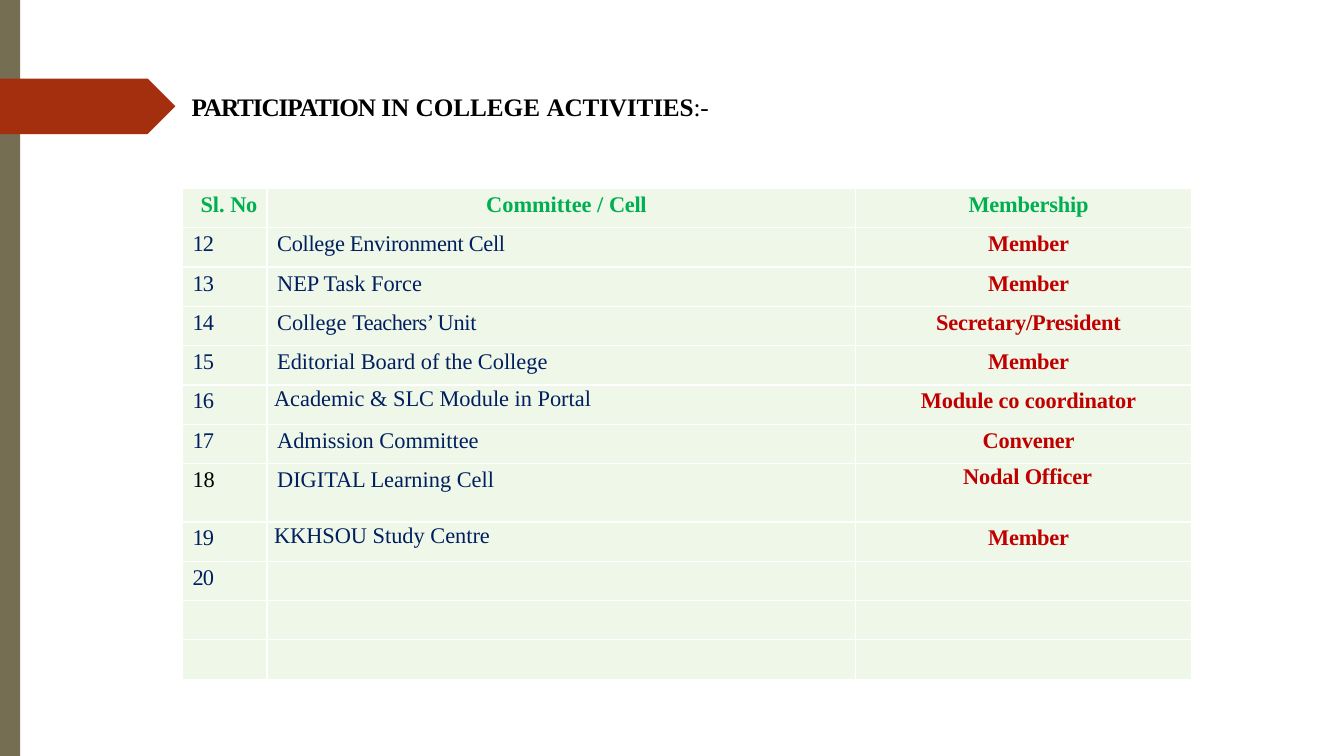
from dataclasses import dataclass

from lxml import etree
from pptx import Presentation
from pptx.dml.color import RGBColor
from pptx.enum.shapes import MSO_SHAPE
from pptx.enum.text import MSO_ANCHOR, MSO_AUTO_SIZE, PP_ALIGN
from pptx.oxml.ns import qn
from pptx.util import Inches, Pt

LEFT, CENTER = PP_ALIGN.LEFT, PP_ALIGN.CENTER
TOP = MSO_ANCHOR.TOP


@dataclass(frozen=True)
class Theme:
    font: str = "Times New Roman"
    title_size: int = 18
    table_size: int = 16
    black: str = "000000"
    header: str = "00AF50"
    entry: str = "001F5F"
    role: str = "C00000"
    cell: str = "EFF7E8"
    border: str = "FFFFFF"
    strip: str = "766E53"
    arrow: str = "A42F0F"


theme = Theme()


def write_spans(para, spans, size, color, bold):
    """Add (text, letter spacing in points) spans in one style to a paragraph."""
    for text, spacing in spans:
        span = para.add_run()
        span.text = text
        span.font.name = theme.font
        span.font.size = Pt(size)
        span.font.bold = bold
        span.font.color.rgb = RGBColor.from_string(color)
        span.font._element.set("spc", str(round(spacing * 100)))


def add_white_borders(cell):
    properties = cell._tc.get_or_add_tcPr()
    for position, side in enumerate(("a:lnL", "a:lnR", "a:lnT", "a:lnB")):
        line = etree.Element(qn(side), w=str(Pt(1)))
        fill = etree.SubElement(line, qn("a:solidFill"))
        etree.SubElement(fill, qn("a:srgbClr"), val=theme.border)
        properties.insert(position, line)


deck = Presentation()
deck.slide_width, deck.slide_height = Inches(13.333), Inches(7.5)
page = deck.slides.add_slide(deck.slide_layouts[5])

# Side strip and arrow
for preset, top, width, height, color in (
    (MSO_SHAPE.RECTANGLE, 0, 0.2, 7.5, theme.strip),
    (MSO_SHAPE.PENTAGON, 0.78, 1.74, 0.55, theme.arrow),
):
    shape = page.shapes.add_shape(preset, 0, Inches(top), Inches(width), Inches(height))
    shape.shadow.inherit = False
    shape.fill.solid()
    shape.fill.fore_color.rgb = RGBColor.from_string(color)
    shape.line.fill.background()

# Title
title = page.shapes.title
title.left, title.top = Inches(1.9), Inches(0.9)
title.width, title.height = Inches(5.25), Inches(0.33)
frame = title.text_frame
frame.margin_left = frame.margin_right = frame.margin_bottom = 0
frame.margin_top = Inches(0.01)
frame.vertical_anchor = TOP
frame.word_wrap = True
frame.auto_size = MSO_AUTO_SIZE.NONE
heading = frame.paragraphs[0]
heading.alignment = LEFT
heading_spans = [("PARTICIPATION ", -0.8), ("IN COLLEGE ", 0), ("ACTIVITIES", -0.1)]
write_spans(heading, heading_spans, theme.title_size, theme.black, True)
write_spans(heading, [(":-", -0.1)], theme.title_size, theme.black, False)

# Committee table: each entry is a list of (text, letter spacing) spans
FIRST_NUMBER = 12
headers = [
    [("Sl. ", 0), ("No", -0.2)],
    [("Committee / ", 0), ("Cell", -0.2)],
    [("Membership", -0.1)],
]
committees = [
    ([("College Environment Cell", -0.2)], "Member"),
    ([("NEP Task Force", 0)], "Member"),
    ([("College ", 0), ("Teachers’ ", -0.4), ("Unit", -0.2)], "Secretary/President"),
    ([("Editorial Board of the College", 0)], "Member"),
    ([("Academic & SLC Module in Portal", 0)], "Module co coordinator"),
    ([("Admission Committee", 0)], "Convener"),
    ([("DIGITAL Learning Cell", 0)], "Nodal Officer"),
    ([("KKHSOU Study Centre", 0)], "Member"),
    ([], ""),
]
EMPTY_ROWS = 2
TALL_ROW = 7
BLACK_NUMBER = 18
TIGHT_CELLS = {(5, 1): 0.07, (7, 2): 0.08, (8, 1): 0.07}
ROW_HEIGHT, TALL_HEIGHT = 0.39, 0.58
column_widths = (0.84, 5.84, 3.33)

rows = [headers]
for number, (committee, role) in enumerate(committees, FIRST_NUMBER):
    spacing = 0 if number == BLACK_NUMBER else -0.5
    rows.append([[(str(number), spacing)], committee, [(role, -0.1)] if role else []])
rows += [[[], [], []]] * EMPTY_ROWS

table = page.shapes.add_table(
    len(rows), len(column_widths), Inches(1.81), Inches(1.87),
    Inches(sum(column_widths)), Inches(ROW_HEIGHT * (len(rows) - 1) + TALL_HEIGHT),
).table
for column, width in zip(table.columns, column_widths):
    column.width = Inches(width)

column_colors = (theme.entry, theme.entry, theme.role)
for r, row in enumerate(rows):
    table.rows[r].height = Inches(TALL_HEIGHT if r == TALL_ROW else ROW_HEIGHT)
    for c, spans in enumerate(row):
        cell = table.cell(r, c)
        cell.fill.solid()
        cell.fill.fore_color.rgb = RGBColor.from_string(theme.cell)
        add_white_borders(cell)
        tight = (r, c) in TIGHT_CELLS
        cell.margin_left = Inches(0.18 if r == c == 0 else TIGHT_CELLS.get((r, c), 0.1))
        cell.margin_top = Inches(0 if tight else 0.04)
        cell.margin_right = cell.margin_bottom = 0
        cell.vertical_anchor = TOP
        para = cell.text_frame.paragraphs[0]
        para.alignment = CENTER if c == 2 or (r == 0 and c == 1) else LEFT
        if tight:
            para.line_spacing = Pt(18.6)
        color = theme.header if r == 0 else column_colors[c]
        if spans and spans[0][0] == str(BLACK_NUMBER):
            color = theme.black
        write_spans(para, spans, theme.table_size, color, r == 0 or c == 2)

deck.save("out.pptx")
